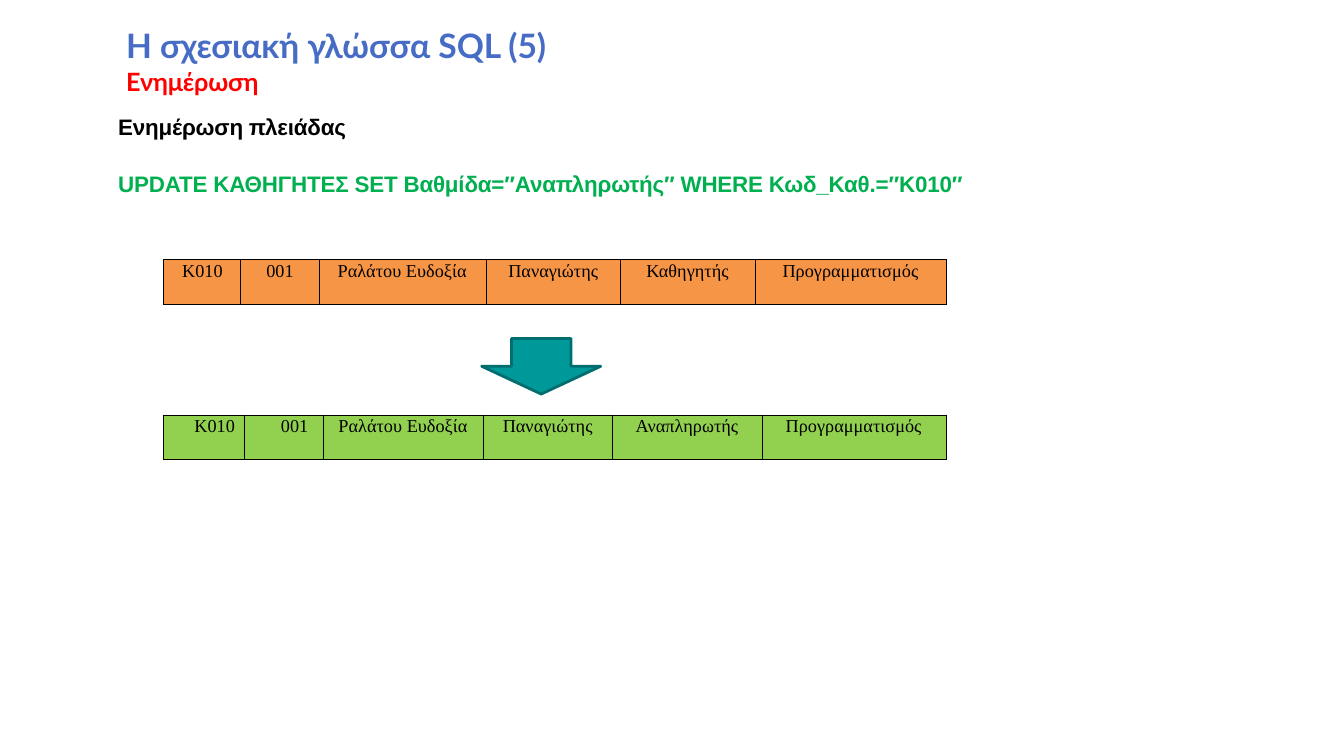
from dataclasses import dataclass

from lxml.etree import SubElement
from pptx import Presentation
from pptx.dml.color import RGBColor
from pptx.enum.shapes import MSO_SHAPE
from pptx.enum.text import MSO_ANCHOR, MSO_AUTO_SIZE, PP_ALIGN
from pptx.oxml.ns import qn
from pptx.util import Cm, Pt


@dataclass(frozen=True)
class Theme:
    """Colours, fonts and type sizes of the slide."""
    blue: str = "466CC6"
    red: str = "FF0000"
    black: str = "000000"
    green: str = "00AF50"
    orange: str = "F79546"
    lime: str = "92D050"
    teal: str = "009999"
    dark_teal: str = "006E6E"
    heading_font: str = "Lato"
    body_font: str = "Arial"
    table_font: str = "Times New Roman"
    title_size: float = 24
    subtitle_size: float = 18
    body_size: float = 16
    table_size: float = 13


class SlideBuilder:
    """Places styled elements on the current slide."""

    def __init__(self, deck, theme):
        self.theme = theme
        self.page = deck.slides.add_slide(deck.slide_layouts[5])

    def fill_para(self, para, text, font, size, color, bold=True, indent=0, spacing=0):
        """Fill a paragraph with one styled span."""
        para.alignment = PP_ALIGN.LEFT
        properties = para._p.get_or_add_pPr()
        properties.set("marL", str(Cm(indent)))
        properties.set("indent", "0")
        span = para.add_run()
        span.text = text
        span._r.get_or_add_rPr().set("spc", str(spacing))
        para.font.name = font
        para.font.size = Pt(size)
        para.font.bold = bold
        para.font.color.rgb = RGBColor.from_string(color)

    def prepare(self, frame):
        """Give a text frame tight margins and wrapping."""
        frame.margin_left = frame.margin_right = frame.margin_bottom = 0
        frame.margin_top = Cm(0.03)
        frame.word_wrap = True
        frame.auto_size = MSO_AUTO_SIZE.NONE
        frame.vertical_anchor = MSO_ANCHOR.TOP

    def title(self, text, left, top, width, height):
        """Place and format the title placeholder."""
        box = self.page.shapes.title
        box.left, box.top, box.width, box.height = map(Cm, (left, top, width, height))
        self.prepare(box.text_frame)
        self.fill_para(box.text_frame.paragraphs[0], text, self.theme.heading_font,
                       self.theme.title_size, self.theme.blue, indent=0.03, spacing=-5)

    def text(self, lines, left, top, width, height):
        """Add a text box with one styled paragraph per line."""
        box = self.page.shapes.add_textbox(*map(Cm, (left, top, width, height)))
        frame = box.text_frame
        self.prepare(frame)
        for number, (before, style) in enumerate(lines):
            para = frame.add_paragraph() if number else frame.paragraphs[0]
            if before:
                para.space_before = Pt(before)
            self.fill_para(para, **style)

    def border(self, cell):
        """Draw a thin line on every side of a cell."""
        properties = cell._tc.get_or_add_tcPr()
        for side in ("lnL", "lnR", "lnT", "lnB"):
            line = SubElement(properties, qn(f"a:{side}"), w=str(Pt(0.75)))
            fill = SubElement(line, qn("a:solidFill"))
            SubElement(fill, qn("a:srgbClr"), val=self.theme.black)

    def record(self, columns, fill, left, top, height):
        """Add a one-row table from (text, width, indent) columns."""
        total = sum(width for _, width, _ in columns)
        frame = self.page.shapes.add_table(1, len(columns), *map(Cm, (left, top, total, height)))
        table = frame.table
        table.first_row = table.horz_banding = False
        for number, (text, width, indent) in enumerate(columns):
            table.columns[number].width = Cm(width)
            cell = table.cell(0, number)
            cell.margin_left = cell.margin_right = cell.margin_top = cell.margin_bottom = 0
            self.border(cell)
            cell.fill.solid()
            cell.fill.fore_color.rgb = RGBColor.from_string(fill)
            para = cell.text_frame.paragraphs[0]
            para.line_spacing = Pt(15.2)
            self.fill_para(para, text, self.theme.table_font, self.theme.table_size,
                           self.theme.black, bold=False, indent=indent, spacing=5)

    def down_arrow(self, left, top, width, height):
        """Add the outlined block arrow."""
        arrow = self.page.shapes.add_shape(MSO_SHAPE.DOWN_ARROW, *map(Cm, (left, top, width, height)))
        arrow.shadow.inherit = False
        arrow.fill.solid()
        arrow.fill.fore_color.rgb = RGBColor.from_string(self.theme.teal)
        arrow.line.color.rgb = RGBColor.from_string(self.theme.dark_teal)
        arrow.line.width = Pt(2)


def main():
    """Build and save the slide."""
    deck = Presentation()
    deck.slide_width, deck.slide_height = Cm(33.87), Cm(19.05)
    theme = Theme()
    page = SlideBuilder(deck, theme)

    page.title("Η σχεσιακή γλώσσα SQL (5)", 3.15, 0.6, 11.86, 1.09)
    body = dict(font=theme.body_font, size=theme.body_size, indent=0.03, spacing=-10)
    page.text([
        (0, dict(text="Ενημέρωση", font=theme.heading_font, size=theme.subtitle_size,
                 color=theme.red, indent=0.23, spacing=-10)),
        (12.4, dict(body, text="Ενημέρωση πλειάδας", color=theme.black)),
        (21, dict(body, text="UPDATE ΚΑΘΗΓΗΤΕΣ SET Βαθμίδα=″Αναπληρωτής″ WHERE Κωδ_Καθ.=″Κ010″",
                  color=theme.green)),
    ], 2.95, 1.63, 21.8, 3.3)

    before = [("Κ010", 1.96, 0.48), ("001", 1.98, 0.64), ("Ραλάτου Ευδοξία", 4.2, 0.46),
              ("Παναγιώτης", 3.38, 0.56), ("Καθηγητής", 3.4, 0.66), ("Προγραμματισμός", 4.83, 0.69)]
    after = [("Κ010", 2.06, 0.79), ("001", 1.98, 0.91), ("Ραλάτου Ευδοξία", 4.04, 0.38),
             ("Παναγιώτης", 3.25, 0.48), ("Αναπληρωτής", 3.78, 0.58), ("Προγραμματισμός", 4.64, 0.58)]
    for columns, fill, top in ((before, theme.orange, 6.55), (after, theme.lime, 10.46)):
        page.record(columns, fill, 4.11, top, 1.11)
    page.down_arrow(12.14, 8.53, 3, 1.4)
    deck.save("out.pptx")


if __name__ == "__main__":
    main()
